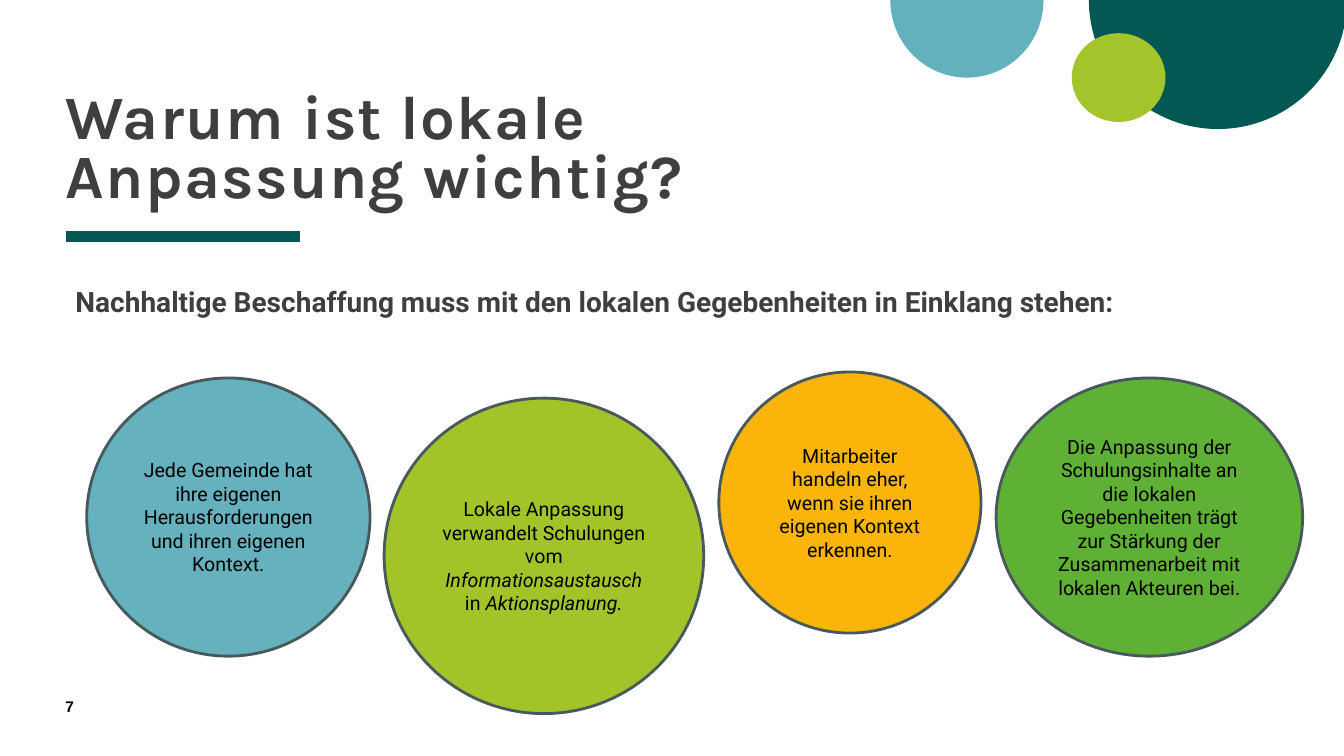
from pptx import Presentation
from pptx.dml.color import RGBColor
from pptx.enum.shapes import MSO_CONNECTOR, MSO_SHAPE
from pptx.enum.text import MSO_ANCHOR, PP_ALIGN
from pptx.util import Inches, Pt
from lxml.etree import SubElement
from pptx.oxml.ns import qn

DARK, TEAL, TEXT, OUTLINE, BLACK = "035854", "64B1BE", "3F3F3F", "47595C", "000000"

TITLE = "Warum ist lokale Anpassung wichtig?"
LEAD = "Nachhaltige Beschaffung muss mit den lokalen Gegebenheiten in Einklang stehen:"
PAGE_NUMBER = "7"

HALF_DISCS = [
    ((10.8, -1.28, 2.56, 2.56), DARK),
    ((8.83, -0.77, 1.52, 1.54), TEAL),
]
SMALL_DISC = ((10.63, 0.33, 0.93, 0.88), "A3C42A")

REASONS = [
    ((0.86, 3.75, 2.81, 2.76), "65B1BE", [
        ("Jede Gemeinde hat ihre eigenen Herausforderungen und ihren eigenen Kontext.", False)]),
    ((7.13, 3.69, 2.6, 2.59), "FBB50A", [
        ("Mitarbeiter handeln eher, wenn sie ihren eigenen Kontext erkennen.", False)]),
    ((3.81, 3.95, 3.17, 3.13), "A3C429", [
        ("Lokale Anpassung verwandelt Schulungen vom ", False),
        ("Informationsaustausch ", True),
        ("in ", False),
        ("Aktionsplanung.", True)]),
    ((9.88, 3.75, 3.04, 2.76), "5FB135", [
        ("Die Anpassung der Schulungsinhalte an die lokalen Gegebenheiten trägt "
         "zur Stärkung der Zusammenarbeit mit lokalen Akteuren bei.", False)]),
]


def color(value):
    return RGBColor.from_string(value)


def add_span(para, text, font, size, shade, bold=False, italic=False):
    span = para.add_run()
    span.text = text
    span.font.name = font
    span.font.size = Pt(size)
    span.font.bold = bold
    span.font.italic = italic
    span.font.color.rgb = color(shade)
    return span


def add_disc(page, kind, place, fill):
    disc = page.shapes.add_shape(kind, *map(Inches, place))
    disc.shadow.inherit = False
    disc.fill.solid()
    disc.fill.fore_color.rgb = color(fill)
    disc.line.fill.background()
    return disc


def add_text(page, place, text, font, size, shade, inset=(0, 0), anchor=MSO_ANCHOR.TOP):
    box = page.shapes.add_textbox(*map(Inches, place))
    frame = box.text_frame
    frame.word_wrap = True
    frame.vertical_anchor = anchor
    frame.margin_left = frame.margin_right = Inches(inset[0])
    frame.margin_top = frame.margin_bottom = Inches(inset[1])
    para = frame.paragraphs[0]
    return para, add_span(para, text, font, size, shade, bold=True)


def add_reason(page, place, fill, spans):
    disc = add_disc(page, MSO_SHAPE.FLOWCHART_CONNECTOR, place, fill)
    disc.line.color.rgb = color(OUTLINE)
    disc.line.width = Pt(2)
    frame = disc.text_frame
    frame.word_wrap = True
    frame.vertical_anchor = MSO_ANCHOR.MIDDLE
    para = frame.paragraphs[0]
    para.alignment = PP_ALIGN.CENTER
    for text, italic in spans:
        add_span(para, text, "Roboto", 14, BLACK, italic=italic)


def main():
    deck = Presentation()
    deck.slide_width, deck.slide_height = Inches(13.33), Inches(7.5)
    page = deck.slides.add_slide(deck.slide_layouts[6])

    for place, fill in HALF_DISCS:
        half = add_disc(page, MSO_SHAPE.PIE, place, fill)
        half.adjustments[0] = 0
        half.adjustments[1] = 108
    add_disc(page, MSO_SHAPE.OVAL, *SMALL_DISC)

    rule = page.shapes.add_connector(
        MSO_CONNECTOR.STRAIGHT, *map(Inches, (0.65, 2.35, 2.98, 2.35)))
    rule.line.color.rgb = color(DARK)
    rule.line.width = Pt(8)
    SubElement(rule.line._get_or_add_ln().getparent(), qn("a:effectLst"))

    para, span = add_text(page, (0.65, 0.35, 7.42, 1.74), TITLE, "Karla", 44, TEXT,
                          anchor=MSO_ANCHOR.BOTTOM)
    para.line_spacing = 0.8
    span.font._element.set("spc", "100")
    add_text(page, (0.65, 6.92, 0.57, 0.27), PAGE_NUMBER, "Arial", 11, BLACK)
    add_text(page, (0.65, 2.77, 12.03, 0.44), LEAD, "Roboto", 20, TEXT, inset=(0.1, 0.05))

    for reason in REASONS:
        add_reason(page, *reason)

    deck.save("out.pptx")


if __name__ == "__main__":
    main()
